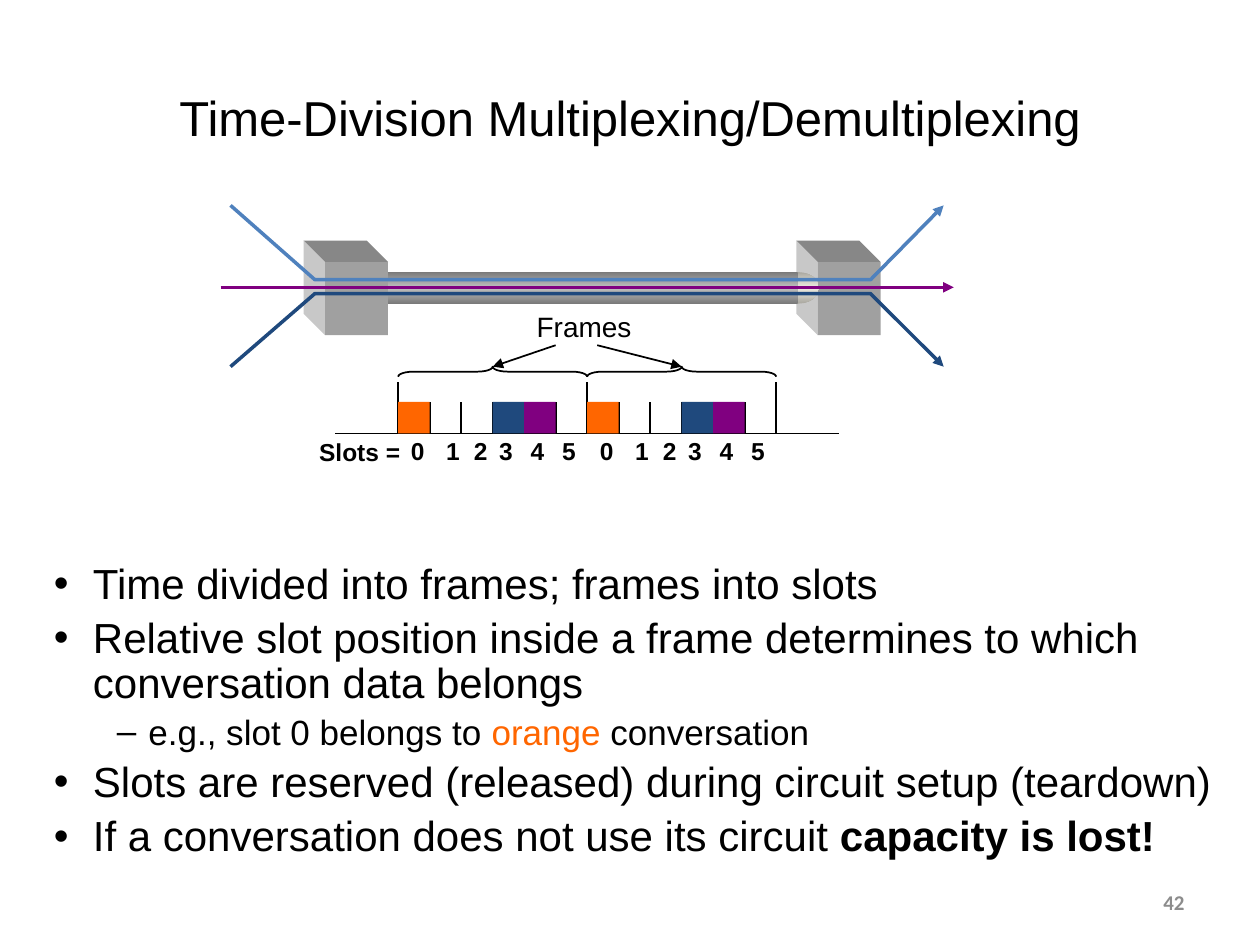
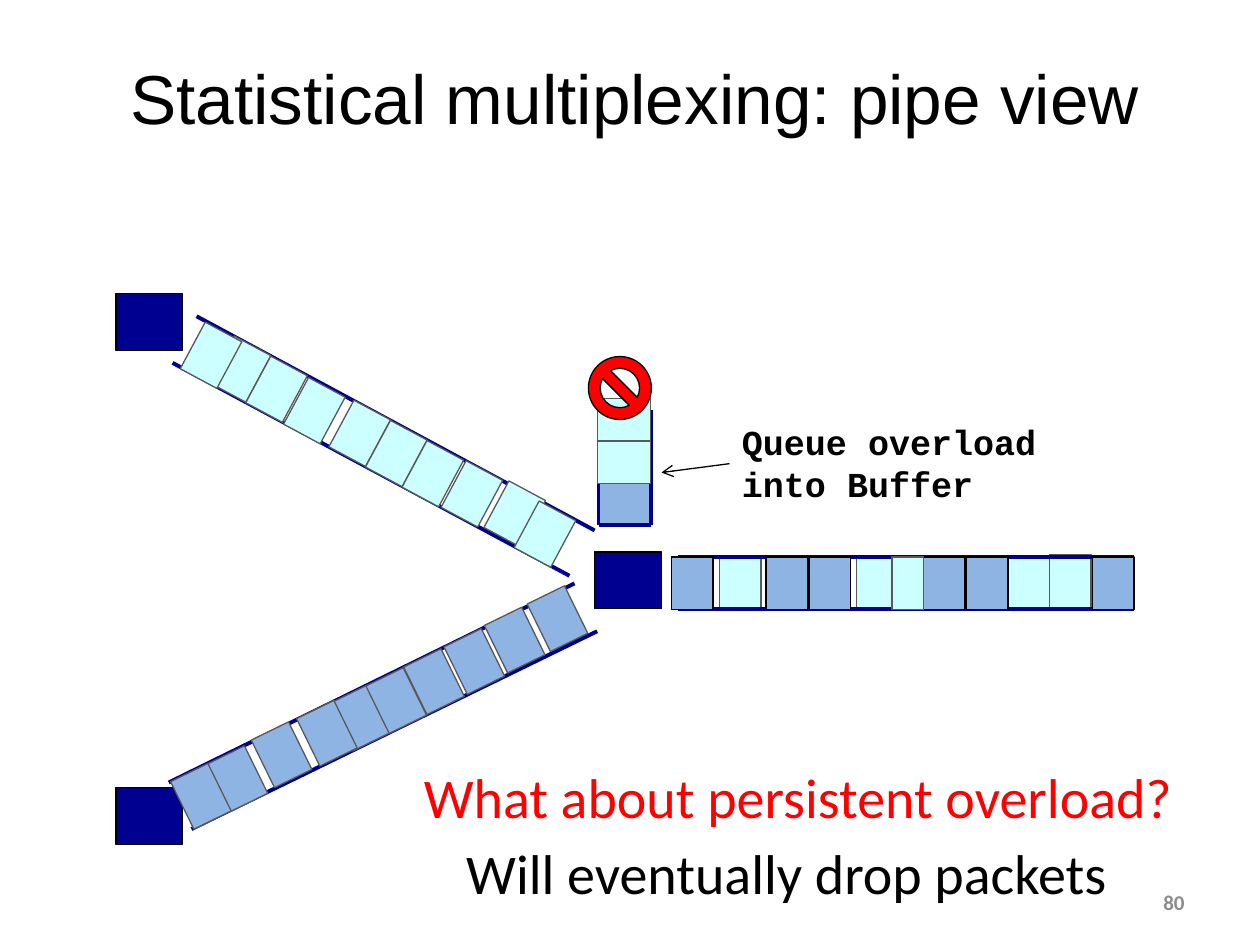
"""Build two slides on time-division and statistical multiplexing."""
import copy

import lxml.etree
import pptx
import pptx.dml.color
import pptx.enum.shapes
import pptx.enum.text
import pptx.oxml.ns
import pptx.util

Inches = pptx.util.Inches
Pt = pptx.util.Pt
SHAPES = pptx.enum.shapes.MSO_SHAPE
ALIGN = pptx.enum.text.PP_ALIGN
MIDDLE = pptx.enum.text.MSO_ANCHOR.MIDDLE
qn = pptx.oxml.ns.qn

COLOURS = {
    "black": "000000", "red": "FF0000", "orange": "FF6600", "purple": "800080",
    "blue": "4F81BD", "dark blue": "1F497D", "navy": "000090",
    "cyan packet": "CCFFFF", "blue packet": "8EB4E3", "packet edge": "595959",
    "number": "8C8C8C", "front": "A0A0A0", "top": "878787", "side": "C8C8C8",
    "pipe edge": "7A7A7A", "pipe": "C0C0C0", "rim edge": "AAA8A0", "rim": "EEECE1",
}
BODY = {"name": "Arial", "size": Pt(24), "bold": False}
DETAIL = {**BODY, "size": Pt(20)}
FRAME_LABEL = {**BODY, "size": Pt(16)}
SLOT_LABEL = {**BODY, "size": Pt(14), "bold": True}
QUESTION = {"name": "Calibri", "size": Pt(32)}
QUEUE_LABEL = {"name": "Courier New", "size": Pt(20), "bold": True}
NUMBER = {"name": "Calibri", "size": Pt(12), "bold": True}

FRAME_LEFT, FRAME_WIDTH, SLOT = 3.16, 1.5, 0.25
SLOT_TOP, SLOT_BASE = 3.19, 3.44


def rgb(name):
    """Return the named colour."""
    return pptx.dml.color.RGBColor.from_string(COLOURS[name])


def add_run(paragraph, text, font_format, colour="black"):
    """Add a formatted run to a paragraph."""
    run = paragraph.add_run()
    run.text = text
    for name, value in font_format.items():
        setattr(run.font, name, value)
    run.font.color.rgb = rgb(colour)


def add_text(slide, box, lines, font_format, colour="black", align=ALIGN.CENTER,
             wrap=True, anchor=None):
    """Add a text box with one paragraph for each line."""
    frame = slide.shapes.add_textbox(*map(Inches, box)).text_frame
    frame.word_wrap = wrap
    frame.vertical_anchor = anchor
    for index, line in enumerate(lines):
        paragraph = frame.paragraphs[0] if index == 0 else frame.add_paragraph()
        paragraph.alignment = align
        add_run(paragraph, line, font_format, colour)


def add_bullets(slide, box, bullets):
    """Add a bulleted list of (level, runs) pairs."""
    frame = slide.shapes.add_textbox(*map(Inches, box)).text_frame
    frame.word_wrap = True
    styles = [("•", 0.31, 0.31, BODY, 5), ("–", 0.75, 0.25, DETAIL, 4)]
    for index, (level, runs) in enumerate(bullets):
        character, margin, hanging, font_format, space = styles[level]
        paragraph = frame.paragraphs[0] if index == 0 else frame.add_paragraph()
        paragraph.level = level
        paragraph.line_spacing = 0.9
        paragraph.space_before = Pt(space)
        properties = paragraph._p.get_or_add_pPr()
        properties.set("marL", str(Inches(margin)))
        properties.set("indent", str(-Inches(hanging)))
        lxml.etree.SubElement(properties, qn("a:buFont")).set("typeface", "Arial")
        lxml.etree.SubElement(properties, qn("a:buChar")).set("char", character)
        for text, colour, bold in runs:
            add_run(paragraph, text, {**font_format, "bold": bold}, colour)


def add_slide(presentation, title, box, size, number):
    """Add a slide with its title and slide number."""
    slide = presentation.slides.add_slide(presentation.slide_layouts[5])
    shape = slide.shapes.title
    shape.left, shape.top, shape.width, shape.height = map(Inches, box)
    frame = shape.text_frame
    frame.vertical_anchor = MIDDLE
    frame.word_wrap = True
    frame.paragraphs[0].alignment = ALIGN.CENTER
    add_run(frame.paragraphs[0], title, {"name": "Arial", "size": Pt(size)})
    add_text(slide, (7.17, 6.96, 2.33, 0.4), [number], NUMBER, "number",
             ALIGN.RIGHT, anchor=MIDDLE)
    return slide


def style_shape(shape, fill=None, line=None, width=0.75):
    """Set a shape's fill and outline, and take off its shadow."""
    shape.shadow.inherit = False
    for part, colour in ((shape.fill, fill), (shape.line.fill, line)):
        if colour:
            part.solid()
            part.fore_color.rgb = rgb(colour)
        else:
            part.background()
    if line:
        shape.line.width = Pt(width)


def add_shape(slide, kind, box, fill=None, line=None, width=0.75, rotation=0):
    """Add a preset shape."""
    shape = slide.shapes.add_shape(kind, *map(Inches, box))
    style_shape(shape, fill, line, width)
    shape.rotation = rotation
    return shape


def add_tube(slide, kind, box, edge, middle):
    """Add a shape shaded from edge to middle to edge."""
    shape = add_shape(slide, kind, box)
    shape.fill.gradient()
    shape.fill.gradient_angle = 90
    stops = shape._element.spPr.find(".//" + qn("a:gsLst"))
    stops.insert(1, copy.deepcopy(stops[0]))
    for stop, position, colour in zip(shape.fill.gradient_stops, (0, 0.5, 1),
                                      (edge, middle, edge)):
        stop.position = position
        stop.color.rgb = rgb(colour)


def add_arrowhead(shape, kind):
    """Put an arrowhead at the end of a line."""
    outline = shape._element.spPr.find(qn("a:ln"))
    lxml.etree.SubElement(outline, qn("a:tailEnd")).set("type", kind)


def add_line(slide, start, end, colour="black", width=1, arrow=None):
    """Add a straight line, with an arrowhead if one is named."""
    connector = slide.shapes.add_connector(
        pptx.enum.shapes.MSO_CONNECTOR.STRAIGHT, *map(Inches, (*start, *end)))
    connector.line.color.rgb = rgb(colour)
    connector.line.width = Pt(width)
    if arrow:
        add_arrowhead(connector, arrow)
    lxml.etree.SubElement(connector._element.spPr, qn("a:effectLst"))


def add_outline(slide, points, closed=False, **style):
    """Add a freeform through the points."""
    points = [tuple(map(Inches, point)) for point in points]
    builder = slide.shapes.build_freeform(*points[0], scale=1.0)
    builder.add_line_segments(points[1:], close=closed)
    shape = builder.convert_to_shape()
    style_shape(shape, **style)
    return shape


def add_multiplexer(slide, left, top):
    """Add a box with its top and left side in depth."""
    width, height, depth = 0.5, 0.58, 0.17
    back_left, back_top = left - depth, top - depth
    add_outline(slide, [(left, top), (back_left, back_top),
                        (back_left + width, back_top), (left + width, top)],
                True, fill="top")
    add_outline(slide, [(left, top), (back_left, back_top),
                        (back_left, back_top + height), (left, top + height)],
                True, fill="side")
    add_shape(slide, SHAPES.RECTANGLE, (left, top, width, height), "front")


def add_flow(slide, outer, inner, colour):
    """Add a conversation that bends into the pipe and out again."""
    points = [(1.83, outer), (2.5, inner), (6.91, inner), (7.49, outer)]
    add_arrowhead(add_outline(slide, points, line=colour, width=2), "triangle")


def add_frame(slide, left):
    """Add one frame with its used slots, labels and brace."""
    for slot, colour in ((0, "orange"), (3, "dark blue"), (4, "purple")):
        add_shape(slide, SHAPES.RECTANGLE,
                  (left + slot * SLOT, SLOT_TOP, SLOT, SLOT), colour)
    for slot, offset in enumerate((0, 0.28, 0.5, 0.7, 0.95, 1.2)):
        add_text(slide, (left + offset, 3.41, 0.31, 0.33), [str(slot)],
                 SLOT_LABEL, wrap=False)
    brace = add_shape(slide, SHAPES.LEFT_BRACE, (left + 0.71, 2.2, 0.08, FRAME_WIDTH),
                      line="black", width=1, rotation=90)
    brace.adjustments[0] = 1.5


def add_packets(slide, corners, fill, rotation=0, line="packet edge", width=0.75):
    """Add a packet at each corner."""
    for left, top in corners:
        add_shape(slide, SHAPES.RECTANGLE, (left, top, 0.33, 0.42), fill, line,
                  width, rotation)


def build_time_division(presentation):
    """Build the time-division slide."""
    slide = add_slide(presentation, "Time-Division Multiplexing/Demultiplexing",
                      (0.5, 0.3, 9, 1.25), 28, "42")
    add_bullets(slide, (0.33, 4.42, 9.5, 2.66), [
        (0, [("Time divided into frames; frames into slots", "black", False)]),
        (0, [("Relative slot position inside a frame determines to which "
              "conversation data belongs", "black", False)]),
        (1, [("e.g., slot 0 belongs to ", "black", False), ("orange", "orange", False),
             (" conversation", "black", False)]),
        (0, [("Slots are reserved (released) during circuit setup (teardown)",
              "black", False)]),
        (0, [("If a conversation does not use its circuit ", "black", False),
             ("capacity is lost!", "black", True)]),
    ])
    add_line(slide, (2.66, SLOT_BASE), (6.66, SLOT_BASE))
    for tick in range(13):
        if tick != 11 or tick % 6:
            x = FRAME_LEFT + tick * SLOT
            add_line(slide, (x, SLOT_BASE), (x, SLOT_TOP if tick % 6 else 3.03))
    add_multiplexer(slide, 6.49, 2.08)
    add_tube(slide, SHAPES.OVAL, (6.17, 2.16, 0.33, 0.25), "rim edge", "rim")
    add_tube(slide, SHAPES.RECTANGLE, (2.91, 2.16, 3.42, 0.25), "pipe edge", "pipe")
    add_multiplexer(slide, 2.58, 2.08)
    add_flow(slide, 1.63, 2.22, "blue")
    add_line(slide, (1.75, 2.28), (7.57, 2.28), "purple", 2, "triangle")
    add_flow(slide, 2.91, 2.33, "dark blue")
    for frame in range(2):
        add_frame(slide, FRAME_LEFT + frame * FRAME_WIDTH)
    add_text(slide, (4.16, 2.41, 0.95, 0.36), ["Frames"], FRAME_LABEL, wrap=False)
    add_text(slide, (2.41, 3.42, 0.89, 0.33), ["Slots = "], SLOT_LABEL, wrap=False)
    for start, end in ((4.41, 3.91), (4.74, 5.41)):
        add_line(slide, (start, 2.74), (end, 2.91), arrow="triangle")


def build_statistical(presentation):
    """Build the statistical multiplexing slide."""
    slide = add_slide(presentation, "Statistical multiplexing: pipe view",
                      (0.5, 0.13, 9.08, 1.28), 39.6, "80")
    for left, top in ((4.72, 4.38), (0.92, 2.33), (0.92, 6.25)):
        add_shape(slide, SHAPES.RECTANGLE, (left, top, 0.53, 0.45), "navy", "black")
    for start, end in (((1.56, 2.51), (4.72, 4.21)), ((1.37, 2.88), (4.52, 4.57)),
                       ((1.34, 6.21), (4.56, 4.63)), ((1.52, 6.58), (4.74, 5.01))):
        add_line(slide, start, end, "navy", 2.25)
    add_packets(slide, [(3.92, 3.87), (3.58, 3.71), (2.69, 3.23), (1.74, 2.72),
                        (2.03, 2.88), (2.33, 3.05), (2.98, 3.39), (3.27, 3.55),
                        (1.51, 2.61), (4.16, 4.03)], "cyan packet", 28.2)
    add_packets(slide, [(3.92, 4.87), (3.6, 5.04), (2.69, 5.49), (1.72, 5.97),
                        (2.07, 5.78), (2.43, 5.61), (2.98, 5.35), (3.28, 5.2),
                        (1.43, 6.11), (4.26, 4.7)], "blue packet", 333.9)
    add_packets(slide, [(8.33, 4.4), (8, 4.41), (6.8, 4.42), (5.71, 4.42)],
                "cyan packet")
    for y in (4.42, 4.83):
        add_line(slide, (5.38, y), (9, y), "navy", 2.25)
    add_packets(slide, [(x, 4.42) for x in (6.08, 8.67, 7.33, 7.67, 6.42, 5.33)],
                "blue packet", line="black")
    add_shape(slide, SHAPES.RECTANGLE, (7.08, 4.42, 0.25, 0.42), "cyan packet",
              "packet edge")
    add_packets(slide, [(4.79, 3.79)], "blue packet", 90, width=0.5)
    for start, end in (((4.75, 3.25), (4.75, 4.17)), ((5.17, 3.25), (5.17, 4.17)),
                       ((4.75, 4.17), (5.17, 4.17))):
        add_line(slide, start, end, "navy", 2.25)
    add_packets(slide, [(4.79, 3.46), (4.79, 3.12)], "cyan packet", 90, width=0.5)
    add_shape(slide, SHAPES.NO_SYMBOL, (4.67, 2.83, 0.5, 0.5), "red", "black")
    add_text(slide, (2.67, 6, 7.33, 0.64), ["What about persistent overload?"],
             QUESTION, "red")
    add_text(slide, (2.58, 6.61, 7.33, 0.64), ["Will eventually drop packets"], QUESTION)
    add_text(slide, (5.79, 3.29, 2.56, 0.77), ["Queue overload", "into Buffer"],
             QUEUE_LABEL, align=ALIGN.LEFT, wrap=False)
    add_line(slide, (5.79, 3.68), (5.25, 3.75), width=0.75, arrow="arrow")


def main():
    """Build and save the presentation."""
    presentation = pptx.Presentation()
    presentation.slide_width = Inches(10)
    presentation.slide_height = Inches(7.5)
    build_time_division(presentation)
    build_statistical(presentation)
    presentation.save("out.pptx")


if __name__ == "__main__":
    main()
